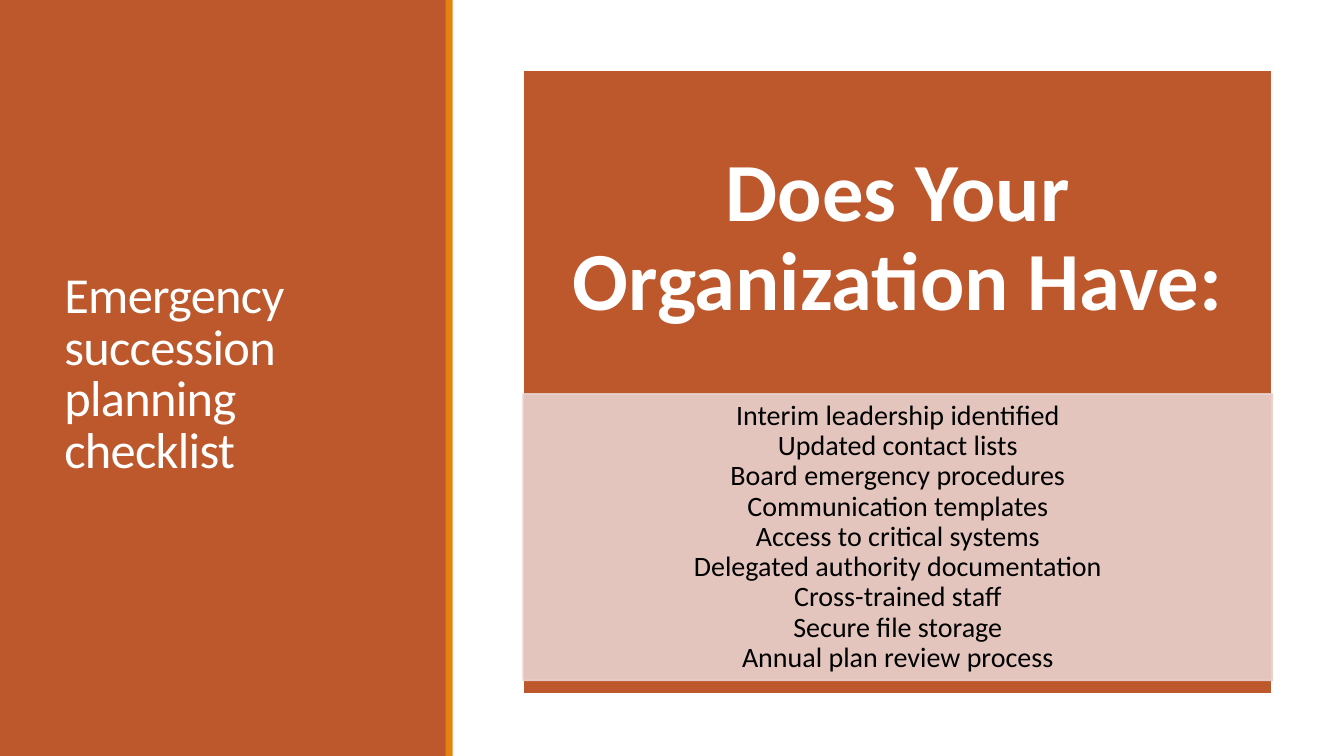
from pptx import Presentation
from pptx.dml.color import RGBColor
from pptx.enum.shapes import MSO_SHAPE as SHAPE
from pptx.enum.text import MSO_ANCHOR as ANCHOR, PP_ALIGN as ALIGN
from pptx.oxml.ns import qn
from pptx.util import Inches, Pt
from lxml import etree

COLORS = {"rust": "BD582C", "orange": "E48312", "blush": "E8D1CD",
          "white": "FFFFFF", "black": "000000"}

CHECKLIST = [
    "Interim leadership identified",
    "Updated contact lists",
    "Board emergency procedures",
    "Communication templates",
    "Access to critical systems",
    "Delegated authority documentation",
    "Cross-trained staff",
    "Secure file storage",
    "Annual plan review process",
]


def add_rect(left, top, width, height, fill, line=None):
    sp = s.shapes.add_shape(SHAPE.RECTANGLE, Inches(left), Inches(top),
                            Inches(width), Inches(height))
    sp.shadow.inherit = False
    sp.fill.solid()
    sp.fill.fore_color.rgb = RGBColor.from_string(COLORS[fill])
    if line:
        sp.line.color.rgb = RGBColor.from_string(COLORS[line])
        sp.line.width = Pt(1.25)
    else:
        sp.line.fill.background()
    return sp


def set_text(sp, text, size, color, align, spacing, inset_x, inset_y):
    tf = sp.text_frame
    tf.word_wrap = True
    tf.vertical_anchor = ANCHOR.MIDDLE
    tf.margin_left = tf.margin_right = Inches(inset_x)
    tf.margin_top = tf.margin_bottom = Inches(inset_y)
    p = tf.paragraphs[0]
    p.text = text
    p.alignment = align
    p.line_spacing = spacing
    for r in p.runs:
        r.font.name = "Calibri"
        r.font.size = Pt(size)
        r.font.color.rgb = RGBColor.from_string(COLORS[color])
    return p


prs = Presentation()
prs.slide_width, prs.slide_height = Inches(13.33), Inches(7.5)
s = prs.slides.add_slide(prs.slide_layouts[6])

# Left band with the slide title
add_rect(0, 0, 4.43, 7.5, "rust")
title = s.shapes.add_textbox(Inches(0.54), Inches(0.57), Inches(3.37), Inches(6.31))
p = set_text(title, "Emergency succession planning checklist", 36, "white",
             ALIGN.LEFT, 0.85, 0.1, 0.05)
p.runs[0].font._element.set("spc", "-50")
add_rect(4.42, 0, 0.07, 7.5, "orange")

# Panel with the question
add_rect(5.19, 0.7, 7.43, 6.18, "rust", "white")
question = s.shapes.add_textbox(Inches(5.19), Inches(0.7), Inches(7.43), Inches(3.34))
p = set_text(question, "Does Your Organization Have:", 59, "white",
             ALIGN.CENTER, 0.9, 0.46, 0.46)
p.runs[0].font.bold = True

# Checklist, one line per item, on a slightly transparent box
checklist = add_rect(5.19, 3.91, 7.43, 2.84, "blush", "blush")
for clr in checklist._element.spPr.iter(qn("a:srgbClr")):
    etree.SubElement(clr, qn("a:alpha"), val="90000")
set_text(checklist, "\v".join(CHECKLIST), 20, "black", ALIGN.CENTER, 0.9, 0.16, 0.03)

prs.save("out.pptx")
